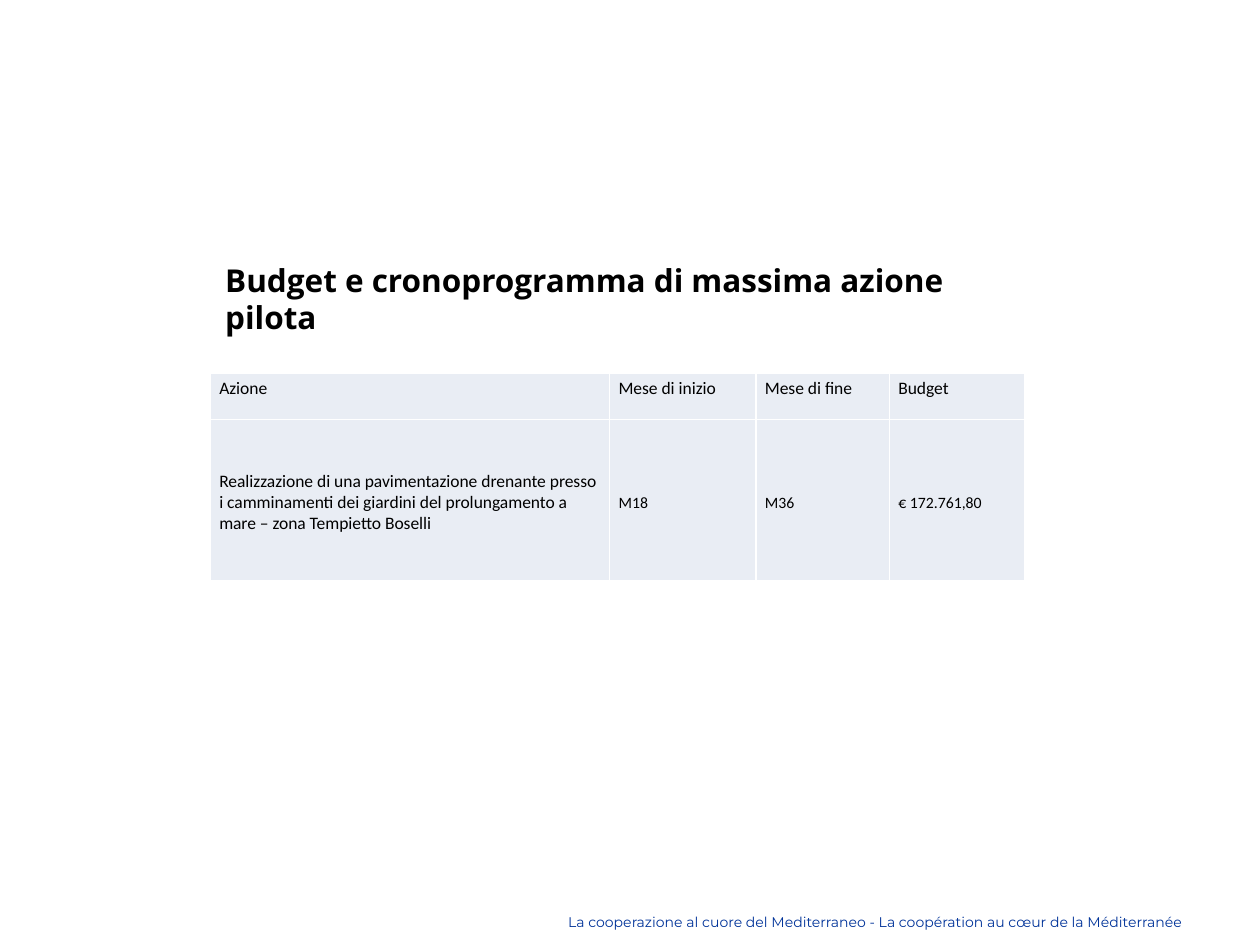
"""Build the slide with the pilot action's budget and schedule."""
import dataclasses
import typing

import lxml.etree
import pptx
import pptx.dml.color
import pptx.enum.text
import pptx.oxml.ns
import pptx.util

Cm = pptx.util.Cm
Anchor = pptx.enum.text.MSO_ANCHOR
Align = pptx.enum.text.PP_ALIGN


@dataclasses.dataclass(frozen=True)
class Style:
    face: str
    size: float
    color: str = "000000"
    bold: bool = False


@dataclasses.dataclass(frozen=True)
class Theme:
    title: Style = Style("Open Sans", 18, bold=True)
    label: Style = Style("Calibri", 10)
    value: Style = Style("Calibri", 9)
    footer: Style = Style("Montserrat", 8, "003399")
    fill: str = "E9EDF4"
    border: str = "FFFFFF"
    stroke: float = 1


THEME = Theme()


class Label(typing.NamedTuple):
    text: str
    box: tuple[float, float, float, float]
    style: Style
    align: Align = Align.LEFT
    anchor: Anchor = Anchor.TOP


class Row(typing.NamedTuple):
    height: float
    anchor: Anchor
    texts: tuple[str, ...]
    styles: tuple[Style, ...]


LABELS = (
    Label("La cooperazione al cuore del Mediterraneo - La coopération au cœur de la Méditerranée",
          (10.69, 18.29, 13.41, 0.61), THEME.footer, Align.RIGHT, Anchor.MIDDLE),
    Label("Budget e cronoprogramma di massima azione pilota",
          (4.29, 5.13, 16.66, 1.02), THEME.title),
)
WIDTHS = (8.05, 2.95, 2.69, 2.72)
ROWS = (
    Row(0.94, Anchor.TOP, ("Azione", "Mese di inizio", "Mese di fine", "Budget"),
        (THEME.label,) * 4),
    Row(3.25, Anchor.MIDDLE,
        ("Realizzazione di una pavimentazione drenante presso i camminamenti dei giardini "
         "del prolungamento a mare – zona Tempietto Boselli", "M18", "M36", "€ 172.761,80"),
        (THEME.label,) + (THEME.value,) * 3),
)


def write(para, text: str, style: Style) -> None:
    para.text = text
    font = para.font
    font.name, font.size, font.bold = style.face, pptx.util.Pt(style.size), style.bold
    font.color.rgb = pptx.dml.color.RGBColor.from_string(style.color)


def add_label(slide, label: Label) -> None:
    frame = slide.shapes.add_textbox(*map(Cm, label.box)).text_frame
    frame.word_wrap = True
    frame.auto_size = pptx.enum.text.MSO_AUTO_SIZE.SHAPE_TO_FIT_TEXT
    frame.vertical_anchor = label.anchor
    para = frame.paragraphs[0]
    para.alignment = label.align
    write(para, label.text, label.style)


def add_borders(cell) -> None:
    qn = pptx.oxml.ns.qn
    props = cell._tc.get_or_add_tcPr()
    for index, side in enumerate(("lnL", "lnR", "lnT", "lnB")):
        line = lxml.etree.Element(qn(f"a:{side}"), w=str(pptx.util.Pt(THEME.stroke)))
        fill = lxml.etree.SubElement(line, qn("a:solidFill"))
        lxml.etree.SubElement(fill, qn("a:srgbClr"), val=THEME.border)
        props.insert(index, line)


def fill_cell(cell, text: str, style: Style, anchor: Anchor) -> None:
    cell.fill.solid()
    cell.fill.fore_color.rgb = pptx.dml.color.RGBColor.from_string(THEME.fill)
    cell.margin_left = cell.margin_right = Cm(0.18)
    cell.margin_top, cell.margin_bottom = Cm(0.1), Cm(0)
    cell.vertical_anchor = anchor
    write(cell.text_frame.paragraphs[0], text, style)
    add_borders(cell)


def add_budget(slide, left: float, top: float) -> None:
    height = sum(row.height for row in ROWS)
    table = slide.shapes.add_table(len(ROWS), len(WIDTHS), Cm(left), Cm(top),
                                   Cm(sum(WIDTHS)), Cm(height)).table
    for column, width in zip(table.columns, WIDTHS):
        column.width = Cm(width)
    for line, row in zip(table.rows, ROWS):
        line.height = Cm(row.height)
        for cell, text, style in zip(line.cells, row.texts, row.styles):
            fill_cell(cell, text, style, row.anchor)


def main() -> None:
    deck = pptx.Presentation()
    deck.slide_width, deck.slide_height = Cm(25.4), Cm(19.05)
    slide = deck.slides.add_slide(deck.slide_layouts[6])
    for label in LABELS:
        add_label(slide, label)
    add_budget(slide, 4.24, 7.52)
    deck.save("out.pptx")


if __name__ == "__main__":
    main()
